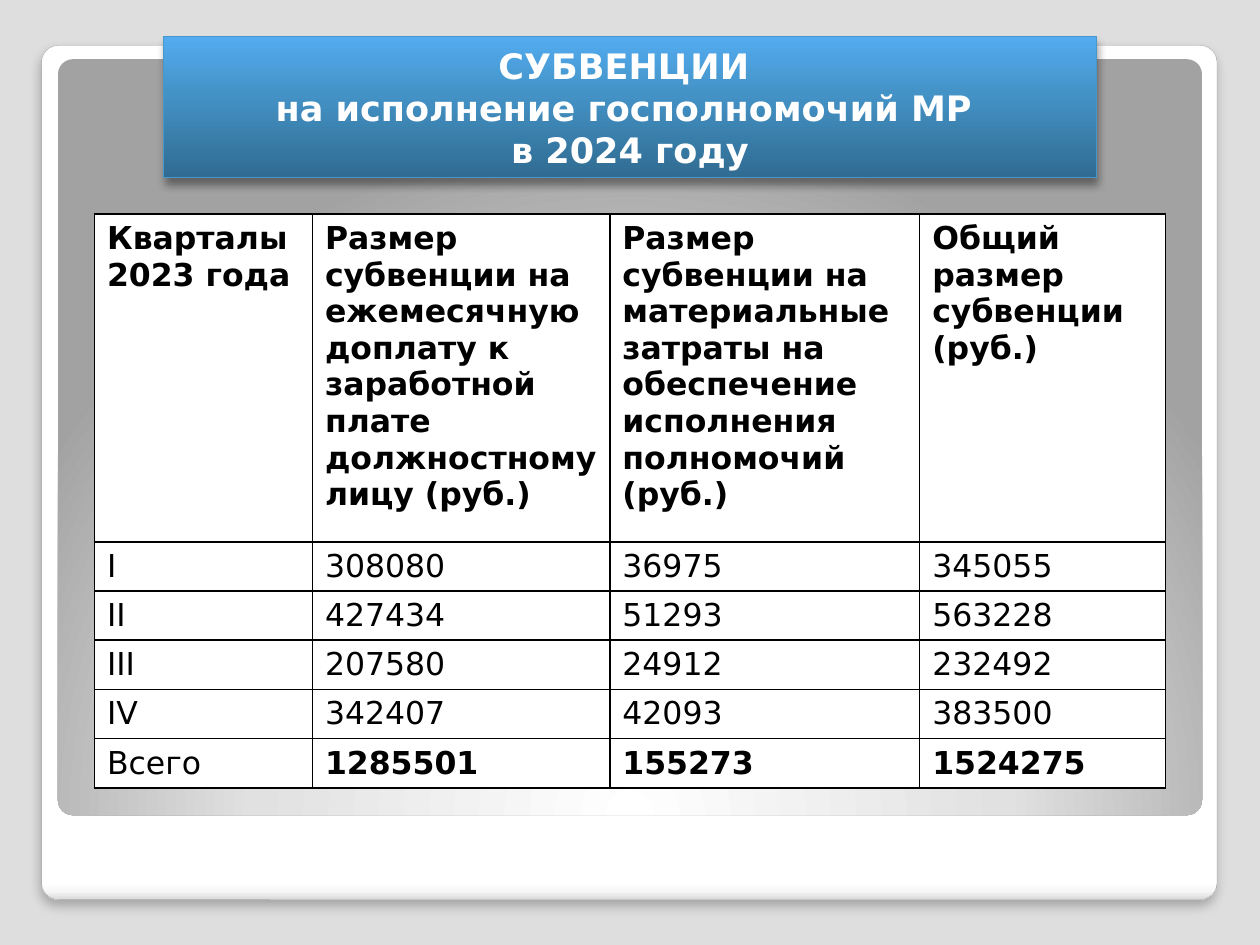
from lxml import etree
from pptx import Presentation
from pptx.dml.color import RGBColor
from pptx.enum.shapes import MSO_SHAPE
from pptx.enum.text import MSO_ANCHOR, MSO_AUTO_SIZE, PP_ALIGN
from pptx.oxml import parse_xml
from pptx.oxml.ns import nsdecls, qn
from pptx.util import Inches, Pt

ROUNDED = MSO_SHAPE.ROUNDED_RECTANGLE
CENTER = PP_ALIGN.CENTER
MIDDLE = MSO_ANCHOR.MIDDLE
NO_AUTOFIT = MSO_AUTO_SIZE.NONE
FONT = "DejaVu Sans"
LINEAR = '<a:lin {ns} ang="{angle}" scaled="0"/>'
CIRCLE = ('<a:path {ns} path="circle"><a:fillToRect l="50000" t="175000" '
          'r="50000" b="-75000"/></a:path>')


def rgb(value):
    return RGBColor.from_string(value)


def style(shape, stops, direction, angle=0, shadow=None):
    """Gradient fill from (percent, colour) stops; shadow is (alpha, blur, distance)."""
    shape.fill.gradient()
    gradient = shape.fill._xPr.find(qn("a:gradFill"))
    for child in list(gradient):
        gradient.remove(child)
    stop_list = etree.SubElement(gradient, qn("a:gsLst"))
    for percent, colour in stops:
        stop = etree.SubElement(stop_list, qn("a:gs"), pos=str(percent * 1000))
        etree.SubElement(stop, qn("a:srgbClr"), val=colour)
    gradient.append(parse_xml(direction.format(ns=nsdecls("a"), angle=angle * 60000)))

    shape.shadow.inherit = False
    if shadow:
        alpha, blur, distance = shadow
        effects = shape.fill._xPr.find(qn("a:effectLst"))
        effects.append(parse_xml(
            f'<a:outerShdw {nsdecls("a")} blurRad="{Pt(blur)}" dist="{Pt(distance)}" '
            f'dir="5400000" algn="t" rotWithShape="0"><a:srgbClr val="000000">'
            f'<a:alpha val="{alpha * 1000}"/></a:srgbClr></a:outerShdw>'))


prs = Presentation()
prs.slide_width, prs.slide_height = Inches(10), Inches(7.5)
slide = prs.slides.add_slide(prs.slide_layouts[5])
slide.background.fill.solid()
slide.background.fill.fore_color.rgb = rgb("DEDEDE")

# White frame and grey inner panel
frame = slide.shapes.add_shape(ROUNDED, Inches(0.33), Inches(0.36), Inches(9.33), Inches(6.78))
frame.adjustments[0] = 0.02
frame.line.color.rgb = rgb("A4A4A4")
frame.line.width = Pt(0.16)
style(frame, [(0, "FFFFFF"), (98, "FFFFFF"), (99, "F7F7F7"), (100, "DADADA")],
      LINEAR, 90, (25, 6, 4))

panel = slide.shapes.add_shape(ROUNDED, Inches(0.46), Inches(0.47), Inches(9.08), Inches(6))
panel.adjustments[0] = 0.02
panel.line.fill.background()
style(panel, [(0, "FFFFFF"), (55, "E1E1E1"), (100, "A2A2A2")], CIRCLE)

# Subvention table
rows = [
    ("Кварталы 2023 года",
     "Размер субвенции на ежемесячную доплату к заработной плате должностному лицу (руб.)",
     "Размер субвенции на материальные затраты на обеспечение исполнения полномочий (руб.)",
     "Общий размер субвенции (руб.)"),
    ("I", "308080", "36975", "345055"),
    ("II", "427434", "51293", "563228"),
    ("III", "207580", "24912", "232492"),
    ("IV", "342407", "42093", "383500"),
    ("Всего", "1285501", "155273", "1524275"),
]
column_widths = [1.73, 2.36, 2.46, 1.95]
table = slide.shapes.add_table(len(rows), len(column_widths), Inches(0.75), Inches(1.7),
                               Inches(8.5), Inches(4.55)).table
for column, width in zip(table.columns, column_widths):
    column.width = Inches(width)
for r, values in enumerate(rows):
    table.rows[r].height = Inches(0.39 if r else 2.6)
    for c, value in enumerate(values):
        cell = table.cell(r, c)
        cell.text = value
        font = cell.text_frame.paragraphs[0].font
        font.name, font.size = FONT, Pt(18)
        font.color.rgb = rgb("000000")
        font.bold = r == 0 or (r == len(rows) - 1 and c > 0)
        cell.fill.solid()
        cell.fill.fore_color.rgb = rgb("FFFFFF")
        # Borders go ahead of the fill
        properties = cell._tc.get_or_add_tcPr()
        for i, side in enumerate(("lnL", "lnR", "lnT", "lnB")):
            properties.insert(i, parse_xml(
                f'<a:{side} {nsdecls("a")} w="{Pt(1)}"><a:solidFill>'
                f'<a:srgbClr val="000000"/></a:solidFill></a:{side}>'))

# Title banner, in front of the panels
title = slide.shapes.title
slide.shapes._spTree.append(title._element)
title.left, title.top = Inches(1.3), Inches(0.29)
title.width, title.height = Inches(7.4), Inches(1.12)
title.line.color.rgb = rgb("4697CB")
title.line.width = Pt(0.75)
style(title, [(0, "306B91"), (60, "4493C7"), (100, "53ACF0")], LINEAR, 270, (40, 5.2, 3))
title.text_frame.text = "СУБВЕНЦИИ \vна исполнение госполномочий МР \vв 2024 году"
title.text_frame.auto_size = NO_AUTOFIT
title.text_frame.vertical_anchor = MIDDLE
heading = title.text_frame.paragraphs[0]
heading.alignment = CENTER
heading.font.name, heading.font.size, heading.font.bold = FONT, Pt(20), True
heading.font.color.rgb = rgb("FFFFFF")

prs.save("out.pptx")
